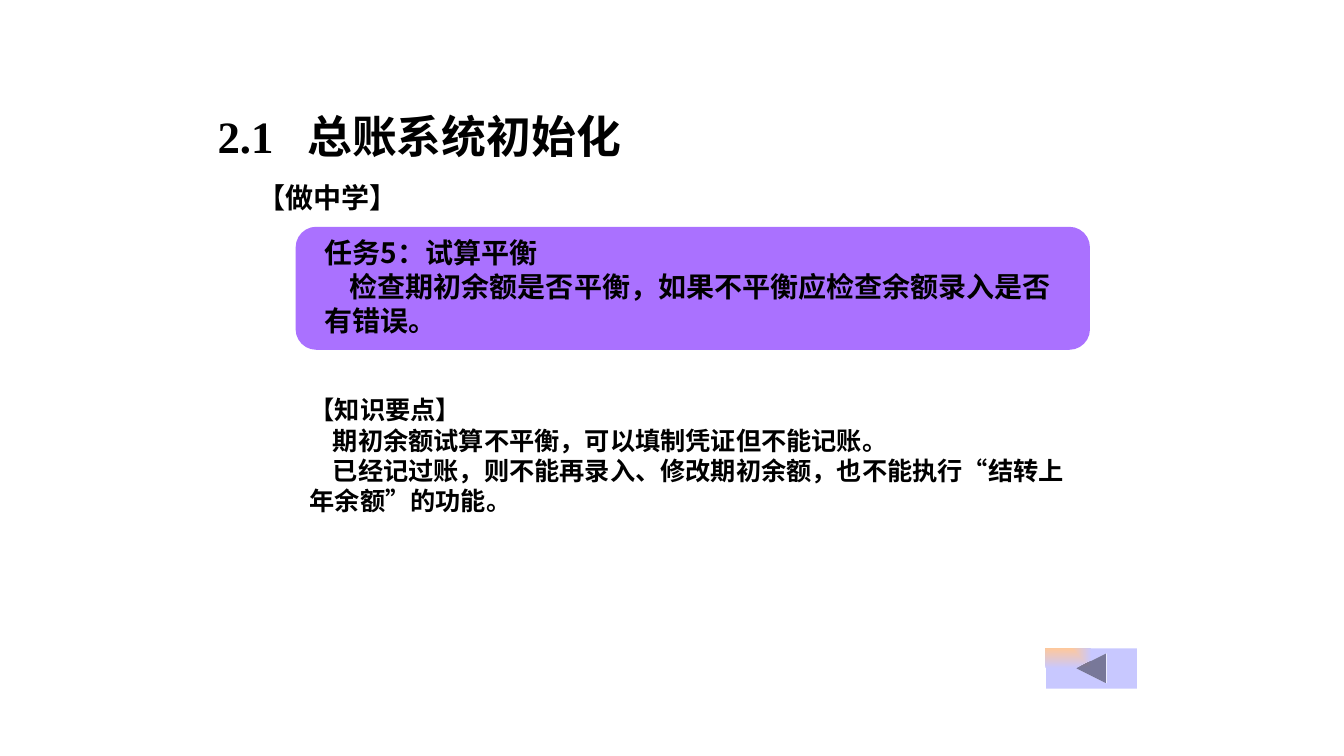
from lxml.etree import SubElement
from pptx import Presentation
from pptx.dml.color import RGBColor
from pptx.enum.shapes import MSO_SHAPE as Shape
from pptx.enum.text import MSO_ANCHOR as Anchor, MSO_AUTO_SIZE as AutoSize
from pptx.oxml.ns import qn
from pptx.util import Inches, Pt

WIDTH, HEIGHT = 13.33, 7.5
SERIF, SANS = "Times New Roman", "Noto Sans CJK SC"
BLACK, PURPLE, PEACH, LAVENDER = "000000", "AA71FF", "FFC89B", "C8C8FF"


def color(code):
    return RGBColor.from_string(code)


def area(left, top, width, height):
    """Turn percentages of the slide's size into lengths."""
    return [Inches(share * size / 100) for share, size in
            ((left, WIDTH), (top, HEIGHT), (width, WIDTH), (height, HEIGHT))]


def add_panel(page, kind, place):
    panel = page.shapes.add_shape(kind, *area(*place))
    panel.shadow.inherit = False
    panel.line.fill.background()
    return panel


def fill_from_corner(shape, inner, outer):
    """Spread a rectangular gradient from the top left corner."""
    shape.fill.gradient()
    for stop, code, position in zip(shape.fill.gradient_stops, (inner, outer), (0, 1)):
        stop.color.rgb = color(code)
        stop.position = position
    gradient = shape.fill._xPr.find(qn("a:gradFill"))
    gradient.remove(gradient.find(qn("a:lin")))
    spread = SubElement(gradient, qn("a:path"), path="rect")
    SubElement(spread, qn("a:fillToRect"), r="100000", b="100000")


def add_text(page, place, lines, size, anchor=Anchor.TOP, wrap=True):
    """Each line is (text, Latin font, left margin, first-line indent)."""
    box = page.shapes.add_textbox(*area(*place))
    frame = box.text_frame
    frame.text = "\n".join(line[0] for line in lines)
    frame.word_wrap = wrap
    frame.auto_size = AutoSize.SHAPE_TO_FIT_TEXT
    frame.vertical_anchor = anchor
    for para, (_, font, margin, indent) in zip(frame.paragraphs, lines):
        properties = para._p.get_or_add_pPr()
        properties.set("marL", str(Inches(margin)))
        properties.set("indent", str(Inches(indent)))
        for span in para.runs:
            span.font.name = font
            span.font.size = Pt(size)
            span.font.bold = True
            span.font.color.rgb = color(BLACK)
            SubElement(span._r.get_or_add_rPr(), qn("a:ea"), typeface=SANS)


def main():
    deck = Presentation()
    deck.slide_width, deck.slide_height = Inches(WIDTH), Inches(HEIGHT)
    page = deck.slides.add_slide(deck.slide_layouts[6])

    # Back button and task panel
    button = add_panel(page, Shape.ACTION_BUTTON_BACK_OR_PREVIOUS,
                       (77.8, 85.75, 6.83, 5.33))
    fill_from_corner(button, PEACH, LAVENDER)
    panel = add_panel(page, Shape.ROUNDED_RECTANGLE, (22, 30, 59.1, 16.27))
    panel.fill.solid()
    panel.fill.fore_color.rgb = color(PURPLE)

    # Title and section label
    add_text(page, (15.45, 13.73, 66.8, 8.53),
             [("2.1\t总账系统初始化", SERIF, 0.89, -0.89)], 32)
    add_text(page, (18.4, 23.2, 12, 5.87), [("【做中学】", SERIF, 0, 0)], 20,
             Anchor.MIDDLE, wrap=False)

    # Task
    add_text(page, (23.4, 30.53, 55.8, 14.8), [
        ("任务5：试算平衡", SANS, 0, 0),
        ("检查期初余额是否平衡，如果不平衡应检查余额录入是否有错误。", SANS, 0, 0.25),
    ], 20)

    # Key points
    add_text(page, (22.3, 51.47, 58.5, 17.47), [
        ("【知识要点】", SERIF, 0, 0),
        ("期初余额试算不平衡，可以填制凭证但不能记账。", SANS, 0, 0.23),
        ("已经记过账，则不能再录入、修改期初余额，也不能执行“结转上年余额”的功能。",
         SANS, 0, 0.23),
    ], 18, Anchor.MIDDLE)

    deck.save("out.pptx")


if __name__ == "__main__":
    main()
